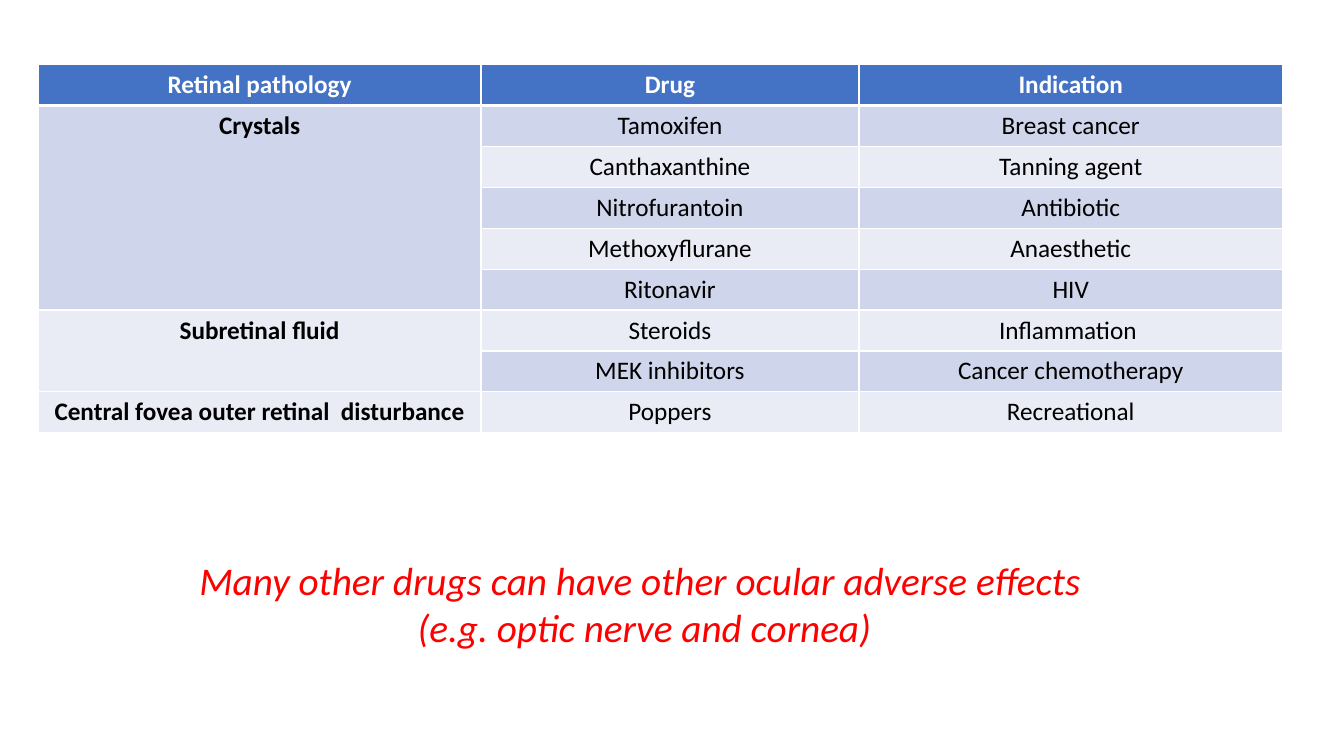
from pptx import Presentation
from pptx.dml.color import RGBColor
from pptx.enum.text import MSO_AUTO_SIZE, PP_ALIGN
from pptx.oxml import parse_xml
from pptx.oxml.ns import nsdecls
from pptx.util import Inches, Pt

HEADER = ["Retinal pathology", "Drug", "Indication"]
PATHOLOGIES = [
    ("Crystals", [
        ("Tamoxifen", "Breast cancer"),
        ("Canthaxanthine", "Tanning agent"),
        ("Nitrofurantoin", "Antibiotic"),
        ("Methoxyflurane", "Anaesthetic"),
        ("Ritonavir", "HIV"),
    ]),
    ("Subretinal fluid", [
        ("Steroids", "Inflammation "),
        ("MEK inhibitors", "Cancer chemotherapy"),
    ]),
    ("Central fovea outer retinal  disturbance", [
        ("Poppers", "Recreational"),
    ]),
]
NOTE = ["Many other drugs can have other ocular adverse effects ",
        "(e.g. optic nerve and cornea)"]

FONT = "Calibri"
COLORS = {"header": "4472C4", "odd": "CFD5EA", "even": "E9EBF5",
          "white": "FFFFFF", "black": "000000", "note": "FF0000"}
COL_WIDTHS = [4.39, 3.75, 4.2]
ROW_HEIGHT = 0.406


def rgb(name):
    return RGBColor.from_string(COLORS[name])


def style_paragraph(p, size, color, bold=False, italic=False):
    p.alignment = PP_ALIGN.CENTER
    p.font.name = FONT
    p.font.size = Pt(size)
    p.font.bold = bold
    p.font.italic = italic
    p.font.color.rgb = rgb(color)


def style_cell(cell, row):
    """Give a cell its white borders and its banded fill."""
    tcPr = cell._tc.get_or_add_tcPr()
    for side in "LRTB":
        thick = (row == 0 and side == "B") or (row == 1 and side == "T")
        tcPr.append(parse_xml(
            f'<a:ln{side} {nsdecls("a")} w="{Pt(3 if thick else 1)}"><a:solidFill>'
            f'<a:srgbClr val="{COLORS["white"]}"/></a:solidFill></a:ln{side}>'))
    cell.fill.solid()
    cell.fill.fore_color.rgb = rgb("header" if row == 0 else "odd" if row % 2 else "even")


def write_cell(cell, text, color="black", bold=False):
    cell.text = text
    style_paragraph(cell.text_frame.paragraphs[0], 18, color, bold)


def add_drug_table(slide):
    n_rows = 1 + sum(len(drugs) for _, drugs in PATHOLOGIES)
    table = slide.shapes.add_table(
        n_rows, len(HEADER), Inches(0.38), Inches(0.64),
        Inches(sum(COL_WIDTHS)), Inches(ROW_HEIGHT * n_rows)).table
    for column, width in zip(table.columns, COL_WIDTHS):
        column.width = Inches(width)
    for i, row in enumerate(table.rows):
        row.height = Inches(ROW_HEIGHT)
        for cell in row.cells:
            style_cell(cell, i)

    for j, title in enumerate(HEADER):
        write_cell(table.cell(0, j), title, "white", bold=True)
    top = 1
    for pathology, drugs in PATHOLOGIES:
        if len(drugs) > 1:
            table.cell(top, 0).merge(table.cell(top + len(drugs) - 1, 0))
        write_cell(table.cell(top, 0), pathology, bold=True)
        for i, entry in enumerate(drugs, top):
            for j, text in enumerate(entry, 1):
                write_cell(table.cell(i, j), text)
        top += len(drugs)


def add_note(slide):
    tf = slide.shapes.add_textbox(
        Inches(1.82), Inches(5.47), Inches(9.14), Inches(1.04)).text_frame
    tf.word_wrap = False
    tf.auto_size = MSO_AUTO_SIZE.SHAPE_TO_FIT_TEXT
    tf.text = "\n".join(NOTE)
    for p in tf.paragraphs:
        style_paragraph(p, 28, "note", italic=True)


def main():
    prs = Presentation()
    prs.slide_width, prs.slide_height = Inches(13.33), Inches(7.5)
    slide = prs.slides.add_slide(prs.slide_layouts[6])
    add_drug_table(slide)
    add_note(slide)
    prs.save("out.pptx")


if __name__ == "__main__":
    main()
